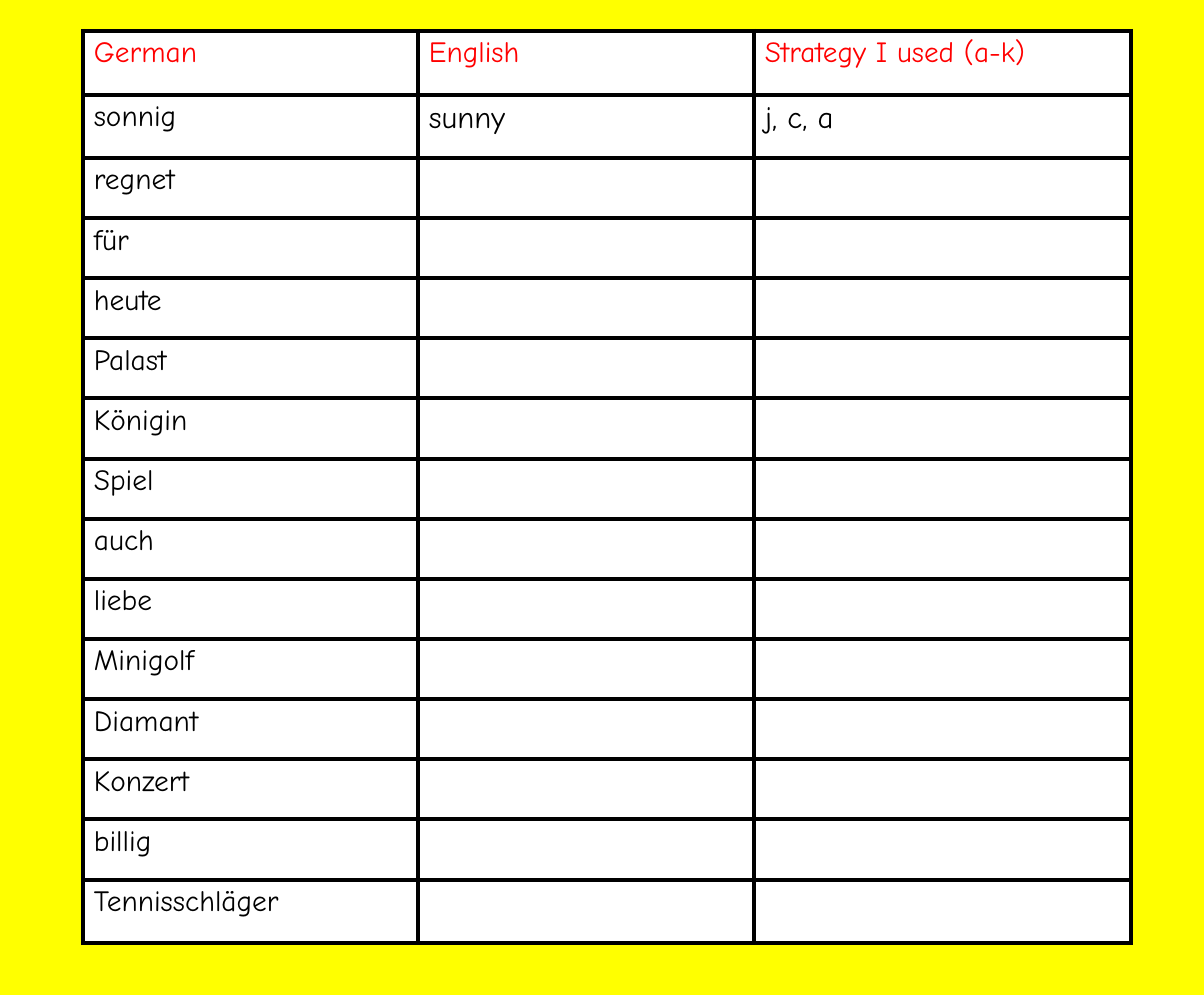
import pptx
import pptx.dml.color
import pptx.oxml
import pptx.oxml.ns
import pptx.util

HEADINGS = ["German", "English", "Strategy I used (a-k)"]
EXAMPLE = ["sonnig", "sunny", "j, c, a"]
GERMAN_WORDS = [
    "regnet", "für", "heute", "Palast", "Königin", "Spiel", "auch",
    "liebe", "Minigolf", "Diamant", "Konzert", "billig", "Tennisschläger",
]
ROWS = [HEADINGS, EXAMPLE] + [[word, "", ""] for word in GERMAN_WORDS]

# Point sizes for each column; the first two rows differ from the rest
HEADING_SIZES = [19.5, 19.5, 19.4]
WORD_SIZES = [19.5, 20.4, 20.5]

YELLOW = pptx.dml.color.RGBColor(0xFF, 0xFF, 0x00)
WHITE = pptx.dml.color.RGBColor(0xFF, 0xFF, 0xFF)
RED = pptx.dml.color.RGBColor(0xFF, 0x00, 0x00)
BLACK = pptx.dml.color.RGBColor(0x00, 0x00, 0x00)
FONT = "Comic Neue"
BORDER_WIDTH = pptx.util.Pt(3)

EMU_PER_PX = 914400 / 108.4
SLIDE_WIDTH, SLIDE_HEIGHT = 1204, 995
COLUMN_EDGES = [83, 418, 754, 1131]
TABLE_TOP, EXAMPLE_TOP, WORDS_TOP, LAST_ROW_TOP, TABLE_BOTTOM = 31, 95, 158, 880, 943


def px(length):
    return pptx.util.Emu(round(length * EMU_PER_PX))


def row_edges():
    """Share the height between the example and the last row equally."""
    even_rows = len(GERMAN_WORDS) - 1
    pitch = (LAST_ROW_TOP - WORDS_TOP) / even_rows
    word_tops = [WORDS_TOP + pitch * index for index in range(even_rows)]
    return [TABLE_TOP, EXAMPLE_TOP, *word_tops, LAST_ROW_TOP, TABLE_BOTTOM]


def add_borders(cell):
    properties = cell._tc.get_or_add_tcPr()
    for position, side in enumerate(["lnL", "lnR", "lnT", "lnB"]):
        line = pptx.oxml.parse_xml(
            f'<a:{side} {pptx.oxml.ns.nsdecls("a")} w="{BORDER_WIDTH}">'
            f'<a:solidFill><a:srgbClr val="{BLACK}"/></a:solidFill></a:{side}>'
        )
        properties.insert(position, line)


def format_cell(cell, text, size, color):
    cell.fill.solid()
    cell.fill.fore_color.rgb = WHITE
    add_borders(cell)
    cell.text_frame.text = text
    for run in cell.text_frame.paragraphs[0].runs:
        run.font.name = FONT
        run.font.size = pptx.util.Pt(size)
        run.font.color.rgb = color


def add_vocabulary_table(slide):
    edges = row_edges()
    left, right = COLUMN_EDGES[0], COLUMN_EDGES[-1]
    table = slide.shapes.add_table(
        len(ROWS), len(HEADINGS), px(left), px(TABLE_TOP),
        px(right - left), px(TABLE_BOTTOM - TABLE_TOP),
    ).table
    table.horz_banding = False
    table.first_row = False
    for column, start, end in zip(table.columns, COLUMN_EDGES, COLUMN_EDGES[1:]):
        column.width = px(end - start)
    for row, start, end in zip(table.rows, edges, edges[1:]):
        row.height = px(end - start)
    for row_index, texts in enumerate(ROWS):
        sizes, color = (WORD_SIZES, BLACK) if row_index else (HEADING_SIZES, RED)
        for column_index, (text, size) in enumerate(zip(texts, sizes)):
            format_cell(table.cell(row_index, column_index), text, size, color)


def main():
    presentation = pptx.Presentation()
    presentation.slide_width = px(SLIDE_WIDTH)
    presentation.slide_height = px(SLIDE_HEIGHT)
    blank_layout = presentation.slide_layouts[6]
    slide = presentation.slides.add_slide(blank_layout)
    slide.background.fill.solid()
    slide.background.fill.fore_color.rgb = YELLOW
    add_vocabulary_table(slide)
    presentation.save("out.pptx")


if __name__ == "__main__":
    main()
